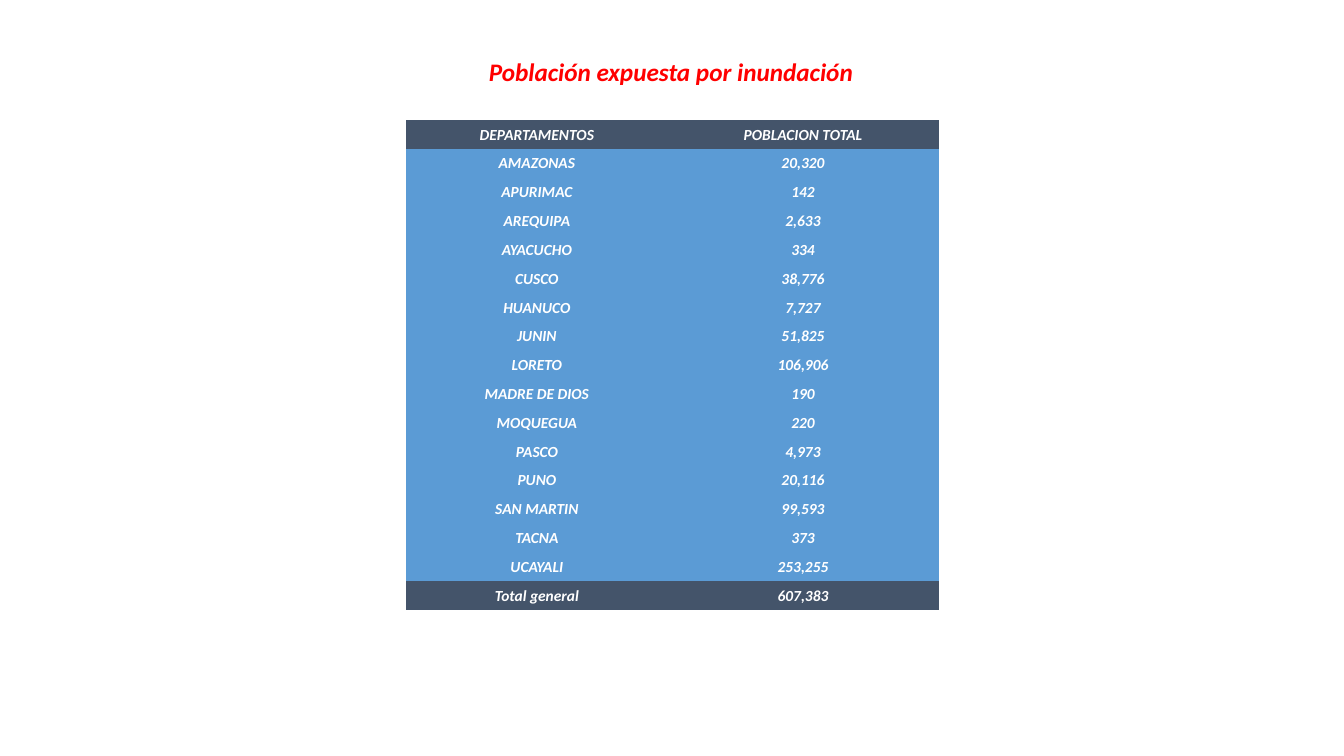
from pptx import Presentation
from pptx import util as u
from pptx.dml.color import RGBColor
from pptx.enum import text
from pptx.oxml.ns import qn

SLIDE_WIDTH, SLIDE_HEIGHT = 13.33, 7.5
COLUMN_WIDTHS = [2.59, 2.69]
ROW_HEIGHT = 4.86 / 17
NO_STYLE_NO_GRID = "{2D5ABB26-0587-4C30-8999-92F81FD0307C}"
DARK, BLUE, WHITE, RED = "44546A", "5B9BD5", "FFFFFF", "FF0000"

ROWS = [
    ("DEPARTAMENTOS", "POBLACION TOTAL"),
    ("AMAZONAS", "20,320"),
    ("APURIMAC", "142"),
    ("AREQUIPA", "2,633"),
    ("AYACUCHO", "334"),
    ("CUSCO", "38,776"),
    ("HUANUCO", "7,727"),
    ("JUNIN", "51,825"),
    ("LORETO", "106,906"),
    ("MADRE DE DIOS", "190"),
    ("MOQUEGUA", "220"),
    ("PASCO", "4,973"),
    ("PUNO", "20,116"),
    ("SAN MARTIN", "99,593"),
    ("TACNA", "373"),
    ("UCAYALI", "253,255"),
    ("Total general", "607,383"),
]


def color(hex_code):
    return RGBColor.from_string(hex_code)


def write(frame, words, size, ink, font="Calibri"):
    """Put one centred bold italic line into a text frame."""
    para = frame.paragraphs[0]
    para.alignment = text.PP_ALIGN.CENTER
    span = para.add_run()
    span.text = words
    span.font.name = font
    span.font.size = u.Pt(size)
    span.font.bold = span.font.italic = True
    span.font.color.rgb = color(ink)


deck = Presentation()
deck.slide_width, deck.slide_height = u.Inches(SLIDE_WIDTH), u.Inches(SLIDE_HEIGHT)
page = deck.slides.add_slide(deck.slide_layouts.get_by_name("Title Only"))

# Title
title = page.shapes.title
title.left, title.top = u.Inches(4.73), u.Inches(0.51)
title.width, title.height = u.Inches(3.85), u.Inches(0.4)
title.text_frame.word_wrap = False
title.text_frame.auto_size = text.MSO_AUTO_SIZE.NONE
title.text_frame.vertical_anchor = text.MSO_ANCHOR.MIDDLE
write(title.text_frame, "Población expuesta por inundación", size=18, ink=RED)

# Population table
table_frame = page.shapes.add_table(
    len(ROWS), len(COLUMN_WIDTHS), u.Inches(4.03), u.Inches(1.19),
    u.Inches(sum(COLUMN_WIDTHS)), u.Inches(ROW_HEIGHT * len(ROWS)))
table = table_frame.table
table.first_row = table.horz_banding = False
for style in table_frame.element.iter(qn("a:tableStyleId")):
    style.text = NO_STYLE_NO_GRID

for column, width in zip(table.columns, COLUMN_WIDTHS):
    column.width = u.Inches(width)

for r, values in enumerate(ROWS):
    table.rows[r].height = u.Inches(ROW_HEIGHT)
    fill = DARK if r in (0, len(ROWS) - 1) else BLUE
    for c, value in enumerate(values):
        cell = table.cell(r, c)
        cell.fill.solid()
        cell.fill.fore_color.rgb = color(fill)
        cell.vertical_anchor = text.MSO_ANCHOR.MIDDLE
        cell.margin_left = cell.margin_right = cell.margin_top = u.Inches(0.01)
        cell.margin_bottom = 0
        write(cell.text_frame, value, size=11, ink=WHITE)

deck.save("out.pptx")
